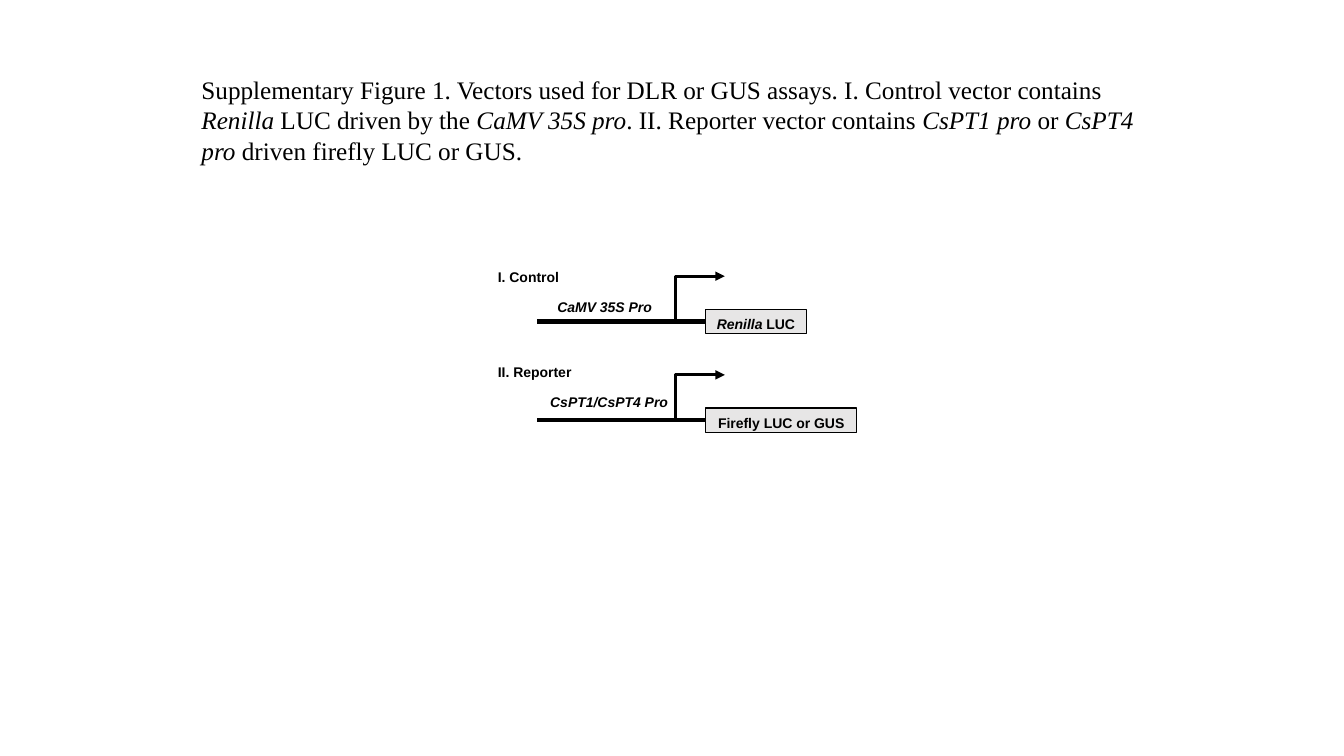
from lxml.etree import SubElement
from pptx import Presentation
from pptx.dml.color import RGBColor
from pptx.enum.shapes import MSO_CONNECTOR as Connector, MSO_SHAPE as Shape
from pptx.enum.text import MSO_ANCHOR as Anchor, MSO_AUTO_SIZE as AutoSize, PP_ALIGN as Align
from pptx.oxml.ns import qn
from pptx.util import Pt

BLACK, GREY = "000000", "E7E6E6"
LEFT_SIDE = 1


def color(hex_text):
    return RGBColor.from_string(hex_text)


def write_runs(frame, runs, font, size, bold=False):
    frame.word_wrap = True
    frame.vertical_anchor = Anchor.TOP
    para = frame.paragraphs[0]
    for text, italic in runs:
        span = para.add_run()
        span.text = text
        span.font.name = font
        span.font.size = Pt(size)
        span.font.bold = bold
        span.font.italic = italic
        span.font.color.rgb = color(BLACK)
    return para


def write_label(frame, runs):
    para = write_runs(frame, runs, "Arial", 10, bold=True)
    para.line_spacing = 1.07
    para.space_after = Pt(8)
    return para


def add_label(page, left, top, width, height, runs):
    box = page.shapes.add_textbox(Pt(left), Pt(top), Pt(width), Pt(height))
    write_label(box.text_frame, runs)


def add_line(page, kind, start, end, weight):
    line = page.shapes.add_connector(kind, *(Pt(value) for value in start + end))
    line.line.color.rgb = color(BLACK)
    line.line.width = Pt(weight)
    SubElement(line._element.spPr, qn("a:effectLst"))
    return line


def add_gene(page, left, top, width, height, runs):
    gene = page.shapes.add_shape(Shape.RECTANGLE, Pt(left), Pt(top), Pt(width), Pt(height))
    gene.shadow.inherit = False
    gene.fill.solid()
    gene.fill.fore_color.rgb = color(GREY)
    gene.line.color.rgb = color(BLACK)
    gene.line.width = Pt(1)
    write_label(gene.text_frame, runs).alignment = Align.CENTER
    return gene


def add_vector(page, left, top, title, title_rise, promoter, promoter_at, gene_runs, gene_width):
    gene_left, gene_top, gene_height = left + 155.5, top + 23.6, 17.5
    middle = gene_top + gene_height / 2
    promoter_left, promoter_top = promoter_at

    add_label(page, left + promoter_left, top + promoter_top, 101, 18, [(promoter, True)])
    gene = add_gene(page, gene_left, gene_top, gene_width, gene_height, gene_runs)
    strand = add_line(page, Connector.STRAIGHT, (left + 35.3, middle), (gene_left, middle), 3)
    strand.end_connect(gene, LEFT_SIDE)
    start = add_line(page, Connector.ELBOW, (left + 98.6, middle), (left + 169.2, top), 2.25)
    SubElement(start.line._get_or_add_ln(), qn("a:tailEnd"), type="triangle")
    add_label(page, left, top - title_rise, 68.5, 18.5, [(title, False)])


def add_caption(page, left, top, width, height):
    box = page.shapes.add_textbox(Pt(left), Pt(top), Pt(width), Pt(height))
    write_runs(box.text_frame, [
        ("Supplementary Figure 1. Vectors used for DLR or GUS assays. I. Control vector contains ", False),
        ("Renilla", True),
        (" LUC driven by the ", False),
        ("CaMV 35S pro", True),
        (". II. Reporter vector contains ", False),
        ("CsPT1 pro", True),
        (" or ", False),
        ("CsPT4 pro", True),
        (" driven firefly LUC or GUS.", False),
    ], "Times New Roman", 18)
    box.text_frame.auto_size = AutoSize.SHAPE_TO_FIT_TEXT


def main():
    deck = Presentation()
    deck.slide_width, deck.slide_height = Pt(960), Pt(540)
    page = deck.slides.add_slide(deck.slide_layouts[6])
    add_vector(page, 348.5, 197.3, "I. Control", 10, "CaMV 35S Pro", (42.5, 11.5),
               [("Renilla", True), (" LUC", False)], 72)
    add_vector(page, 348.5, 267.8, "II. Reporter", 12.2, "CsPT1/CsPT4 Pro", (37.4, 8.7),
               [("Firefly LUC or GUS", False)], 108)
    add_caption(page, 136.8, 49.7, 686, 72.7)
    deck.save("out.pptx")


if __name__ == "__main__":
    main()
